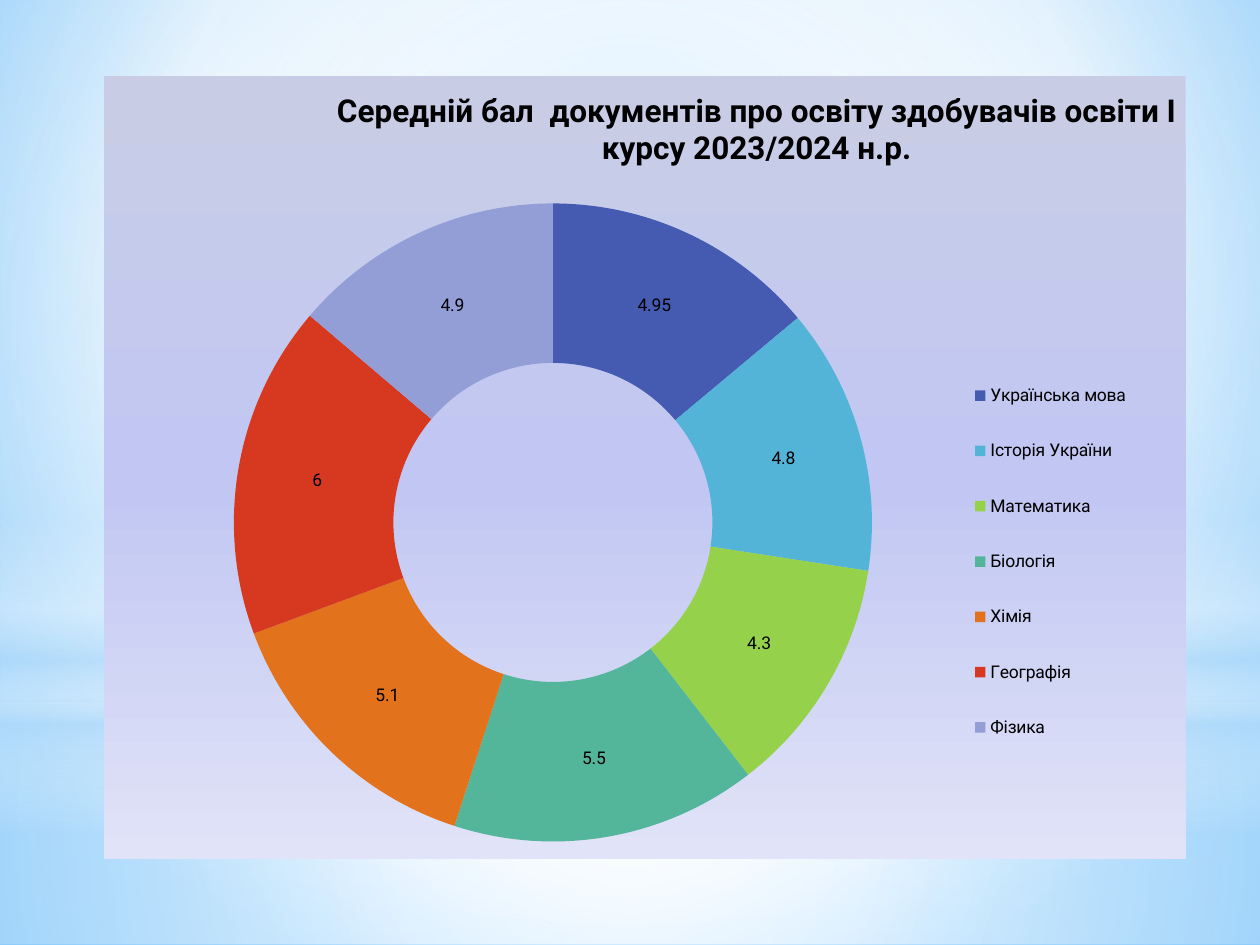
from typing import NamedTuple

from lxml.etree import SubElement
from pptx import Presentation
from pptx.chart.data import CategoryChartData
from pptx.dml.color import RGBColor
from pptx.enum.chart import XL_CHART_TYPE, XL_LEGEND_POSITION
from pptx.enum.shapes import MSO_SHAPE
from pptx.oxml.ns import qn
from pptx.util import Pt

FONT = "Roboto"
TITLE = "Середній бал  документів про освіту здобувачів освіти І курсу 2023/2024 н.р."


class Stop(NamedTuple):
    pos: int
    hue: str
    alpha: int = 100


class Grad(NamedTuple):
    stops: list[Stop]
    focus: tuple[int, ...] = ()  # left, top, right, bottom; empty means downward


class Glow(NamedTuple):
    kind: MSO_SHAPE
    top: float
    high: float
    grad: Grad


class Mark(NamedTuple):
    name: str
    score: float
    hue: str


MID = (50, 50, 50, 50)
SKY = Grad([Stop(0, "9ED5FF"), Stop(60, "FFFFFF"), Stop(100, "5BB9FF")],
           (20, 10, 20, 60))
PANEL = Grad([Stop(0, "C8CDE5"), Stop(52, "C1C7F2"), Stop(100, "E1E3F8")])
GLOWS = [
    Glow(MSO_SHAPE.RECTANGLE, 402, 138, Grad(
        [Stop(0, "FFFFFF", 91), Stop(37, "FFFFFF", 76), Stop(100, "B4DCFA", 79)], MID)),
    Glow(MSO_SHAPE.RECTANGLE, 0, 402, Grad(
        [Stop(0, "FFFFFF", 89), Stop(48, "FFFFFF", 62), Stop(100, "B4DCFA", 79)], MID)),
    Glow(MSO_SHAPE.RECTANGLE, 296.64, 180, Grad(
        [Stop(0, "FFFFFF", 0), Stop(29, "FFFFFF", 30), Stop(45, "B4DCFA", 40),
         Stop(55, "FFFFFF", 26), Stop(65, "B4DCFA", 60), Stop(100, "FFFFFF", 0)])),
    Glow(MSO_SHAPE.OVAL, 126, 402, Grad(
        [Stop(0, "FFFFFF"), Stop(56, "FFFFFF", 0)], MID)),
]
MARKS = [
    Mark("Українська мова", 4.95, "455BB1"),
    Mark("Історія України", 4.8, "54B4D8"),
    Mark("Математика", 4.3, "95D14B"),
    Mark("Біологія", 5.5, "53B69B"),
    Mark("Хімія", 5.1, "E2721C"),
    Mark("Географія", 6, "D63820"),
    Mark("Фізика", 4.9, "949ED6"),
]


def tint(hue: str) -> RGBColor:
    return RGBColor.from_string(hue)


def add(host, tag: str, **attrs):
    return SubElement(host, qn(tag), {key: str(val) for key, val in attrs.items()})


def blend(host, grad: Grad) -> None:
    """Add a gradient fill to a properties element."""
    fill = add(host, "a:gradFill", rotWithShape=1)
    stops = add(fill, "a:gsLst")
    for stop in grad.stops:
        point = add(stops, "a:gs", pos=stop.pos * 1000)
        hue = add(point, "a:srgbClr", val=stop.hue)
        if stop.alpha < 100:
            add(hue, "a:alpha", val=stop.alpha * 1000)
    if grad.focus:
        way = add(fill, "a:path", path="circle")
        add(way, "a:fillToRect",
            **{side: part * 1000 for side, part in zip("ltrb", grad.focus)})
    else:
        add(fill, "a:lin", ang=5400000, scaled=0)


def refill(root, fill, grad: Grad) -> None:
    """Swap the default gradient under root for the given one."""
    fill.gradient()
    old = root.find(".//" + qn("a:gradFill"))
    host = old.getparent()
    blend(host, grad)
    host.replace(old, host[-1])


def draw_glow(slide, glow: Glow) -> None:
    shape = slide.shapes.add_shape(glow.kind, 0, Pt(glow.top), Pt(720), Pt(glow.high))
    shape.shadow.inherit = False
    shape.line.fill.background()
    refill(shape._element, shape.fill, glow.grad)


def place(part, prior, x: float, y: float, size: tuple[float, ...] = (),
          inner: bool = False) -> None:
    """Set a chart part's layout as fractions of the chart."""
    for old in part.findall(qn("c:layout")):
        part.remove(old)
    box = add(part, "c:layout")
    rule = add(box, "c:manualLayout")
    if inner:
        add(rule, "c:layoutTarget", val="inner")
    for tag in ("xMode", "yMode"):
        add(rule, f"c:{tag}", val="edge")
    for tag, val in zip("xywh", (x, y, *size)):
        add(rule, f"c:{tag}", val=val)
    if prior is None:
        part.insert(0, box)
    else:
        prior.addnext(box)


def style(font, size: float, bold: bool = False) -> None:
    font.name = FONT
    font.size = Pt(size)
    font.bold = bold
    font.color.rgb = tint("000000")


def draw_chart(slide, marks: list[Mark]) -> None:
    data = CategoryChartData()
    data.categories = [mark.name for mark in marks]
    data.add_series("Series 1", [mark.score for mark in marks])
    chart = slide.shapes.add_chart(XL_CHART_TYPE.DOUGHNUT, Pt(59.5), Pt(43.5),
                                   Pt(618), Pt(447.5), data).chart
    style(chart.font, 10)

    # Panel behind the ring
    space = chart._chartSpace
    panel = add(space, "c:spPr")
    blend(panel, PANEL)
    add(add(panel, "a:ln"), "a:noFill")
    space.chart.addnext(panel)

    # Title
    chart.has_title = True
    title = chart.chart_title
    run = title.text_frame.paragraphs[0].add_run()
    run.text = TITLE
    style(run.font, 18, True)
    title.include_in_layout = False
    root = title._element
    place(root, root.find(qn("c:tx")), 0.21, 0.01)

    # Legend
    chart.has_legend = True
    legend = chart.legend
    legend.position = XL_LEGEND_POSITION.RIGHT
    legend.include_in_layout = False
    style(legend.font, 10)
    root = legend._element
    place(root, root.find(qn("c:legendPos")), 0.79, 0.35, (0.17, 0.54))

    # Ring and its values
    plot = chart.plots[0]
    plot.vary_by_categories = True
    plot._element.find(qn("c:holeSize")).set("val", "50")
    plot.has_data_labels = True
    plot.data_labels.show_value = True
    plot.data_labels.show_percentage = False
    style(plot.data_labels.font, 10)
    for spot, mark in enumerate(marks):
        look = plot.series[0].points[spot].format
        look.fill.solid()
        look.fill.fore_color.rgb = tint(mark.hue)
        look.line.fill.background()
    place(space.chart.plotArea, None, 0.12, 0.16, (0.59, 0.82), True)


def main() -> None:
    deck = Presentation()
    deck.slide_width, deck.slide_height = Pt(720), Pt(540)
    slide = deck.slides.add_slide(deck.slide_layouts[6])

    # Sky backdrop
    refill(slide._element, slide.background.fill, SKY)
    for glow in GLOWS:
        draw_glow(slide, glow)

    draw_chart(slide, MARKS)
    deck.save("out.pptx")


if __name__ == "__main__":
    main()
